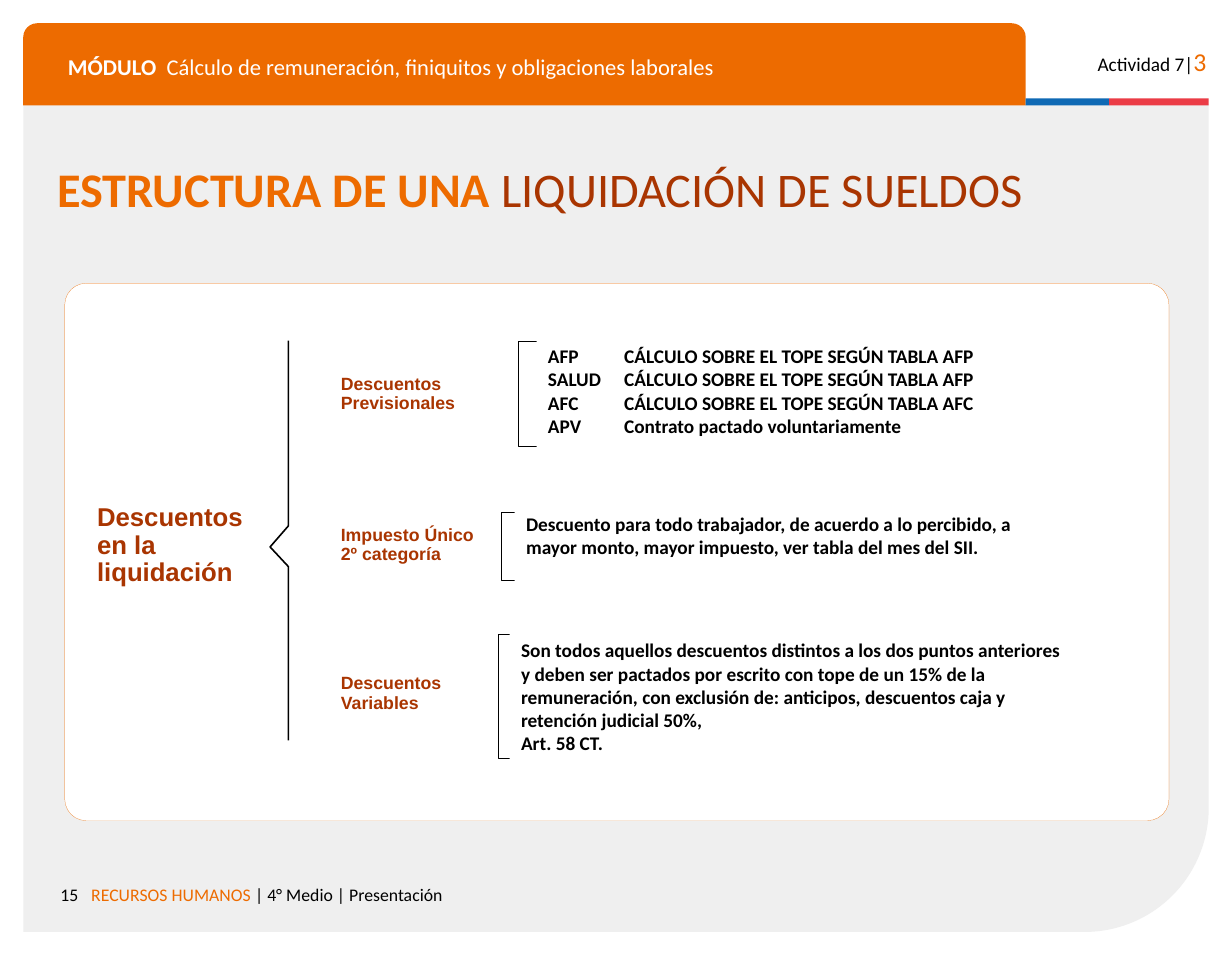
import pptx
import pptx.util
import pptx.dml.color
import pptx.enum.shapes
import pptx.enum.text

Cm, Pt = pptx.util.Cm, pptx.util.Pt
RGB = pptx.dml.color.RGBColor
MSO = pptx.enum.shapes.MSO_SHAPE
TOP = pptx.enum.text.MSO_ANCHOR.TOP
LEFT = pptx.enum.text.PP_ALIGN.LEFT
RIGHT = pptx.enum.text.PP_ALIGN.RIGHT

COLORS = {
    "orange": "ED6B00", "rust": "A93501", "gray": "EFEFEF", "blue": "0F69B4",
    "red": "EB3C46", "white": "FFFFFF", "black": "000000",
}

prs = pptx.Presentation()
prs.slide_width, prs.slide_height = Cm(27), Cm(21)
s = prs.slides.add_slide(prs.slide_layouts[6])


def add_block(box, fill, line=None, width=0.25, kind=MSO.RECTANGLE):
    sp = s.shapes.add_shape(kind, *map(Cm, box))
    sp.shadow.inherit = False
    sp.fill.solid()
    sp.fill.fore_color.rgb = RGB.from_string(COLORS[fill])
    if line:
        sp.line.color.rgb = RGB.from_string(COLORS[line])
        sp.line.width = Pt(width)
    else:
        sp.line.fill.background()
    return sp


def write(sp, paragraphs, font="Calibri", align=LEFT, spacing=1.0, inset=(0.25, 0.13)):
    """Each paragraph is a list of runs: (text, size, color, bold)."""
    tf = sp.text_frame
    tf.word_wrap = True
    tf.vertical_anchor = TOP
    tf.margin_left = tf.margin_right = Cm(inset[0])
    tf.margin_top = tf.margin_bottom = Cm(inset[1])
    for i, runs in enumerate(paragraphs):
        p = tf.add_paragraph() if i else tf.paragraphs[0]
        p.alignment = align
        p.line_spacing = spacing
        for text, size, color, bold in runs:
            r = p.add_run()
            r.text = text
            r.font.name, r.font.size, r.font.bold = font, Pt(size), bold
            r.font.color.rgb = RGB.from_string(COLORS[color])


# Page frame and content panel
page = add_block((4.43, -1.63, 18.14, 25.98), "gray", kind=MSO.ROUND_1_RECTANGLE)
page.rotation = 90
page.adjustments[0] = 0.15
header = add_block((0.51, 0.51, 21.97, 1.8), "orange", kind=MSO.ROUND_2_SAME_RECTANGLE)
header.adjustments[0] = 0.17
add_block((22.48, 2.16, 1.83, 0.15), "blue")
add_block((24.31, 2.16, 2.18, 0.15), "red")
panel = add_block((1.42, 6.21, 24.2, 11.78), "white", "orange", 0.1, MSO.ROUNDED_RECTANGLE)
panel.adjustments[0] = 0.04

# Header, footer and title
for box, align, spacing, inset, runs in [
    ((1.24, 0.97, 2.6, 0.89), LEFT, 0.9, 0.25, [("MÓDULO", 14, "white", True)]),
    ((3.4, 0.97, 18.5, 0.89), LEFT, 0.9, 0.25,
     [("Cálculo de remuneración, finiquitos y obligaciones laborales", 14, "white", False)]),
    ((23.44, 0.76, 3.25, 0.97), RIGHT, 1.0, 0.25,
     [("Actividad 7|", 12, "black", False), ("3", 16, "orange", False)]),
    ((0.5, 19.13, 1.47, 0.74), RIGHT, 1.0, 0.25, [("15", 11, "black", False)]),
    ((1.75, 19.13, 18, 0.97), LEFT, 1.0, 0.25,
     [("RECURSOS HUMANOS ", 11, "orange", False),
      ("| 4° Medio | Presentación", 11, "black", False)]),
    ((1.01, 3.37, 24.89, 1.55), LEFT, 1.0, 0.13,
     [("ESTRUCTURA DE UNA ", 30, "orange", True),
      ("LIQUIDACIÓN DE SUELDOS", 30, "rust", False)]),
]:
    write(s.shapes.add_textbox(*map(Cm, box)), [runs],
          align=align, spacing=spacing, inset=(0.25, inset))

# Root and categories
for box, size, lines in [
    ((1.88, 10.92, 4.01, 2.11), 16, ["Descuentos", "en la liquidación"]),
    ((7.22, 8.1, 3.86, 1.12), 11, ["Descuentos", "Previsionales"]),
    ((7.22, 11.4, 4.34, 1.12), 11, ["Impuesto Único", "2º categoría"]),
    ((7.22, 14.66, 4.01, 1.12), 11, ["Descuentos", "Variables"]),
]:
    write(add_block(box, "white"), [[(line, size, "rust", True)] for line in lines],
          font="Arial", spacing=0.9)

brace_points = [(Cm(x), Cm(y)) for x, y in
                [(6.32, 7.47), (6.32, 11.53), (5.92, 11.99), (6.32, 12.42), (6.32, 16.23)]]
fb = s.shapes.build_freeform(*brace_points[0])
fb.add_line_segments(brace_points[1:], close=False)
brace = fb.convert_to_shape()
brace.shadow.inherit = False
brace.fill.background()
brace.line.color.rgb = RGB.from_string(COLORS["black"])
brace.line.width = Pt(1)

# Each detail covers the right part of its outlined block, leaving a bracket
for bracket, details in [
    ((10.98, 11.23, 0.94, 1.5), [
        ((11.28, 11.02, 12.27, 1.96),
         ["Descuento para todo trabajador, de acuerdo a lo percibido, a mayor monto, "
          "mayor impuesto, ver tabla del mes del SII."])]),
    ((10.92, 13.9, 0.94, 2.72), [
        ((11.17, 13.79, 12.6, 2.95),
         ["Son todos aquellos descuentos distintos a los dos puntos anteriores y deben ser "
          "pactados por escrito con tope de un 15% de la remuneración, con exclusión de: "
          "anticipos, descuentos caja y retención judicial 50%,",
          "Art. 58 CT."])]),
    ((11.35, 7.47, 1.42, 2.31), [
        ((11.76, 7.34, 2.03, 2.95), ["AFP", "SALUD", "AFC", "APV"]),
        ((13.43, 7.34, 11.38, 2.95),
         ["CÁLCULO SOBRE EL TOPE SEGÚN TABLA AFP",
          "CÁLCULO SOBRE EL TOPE SEGÚN TABLA AFP",
          "CÁLCULO SOBRE EL TOPE SEGÚN TABLA AFC",
          "Contrato pactado voluntariamente"])]),
]:
    add_block(bracket, "white", "black")
    for box, lines in details:
        write(add_block(box, "white"), [[(line, 12, "black", True)] for line in lines],
              inset=(0.25, 0.21))

prs.save("out.pptx")
